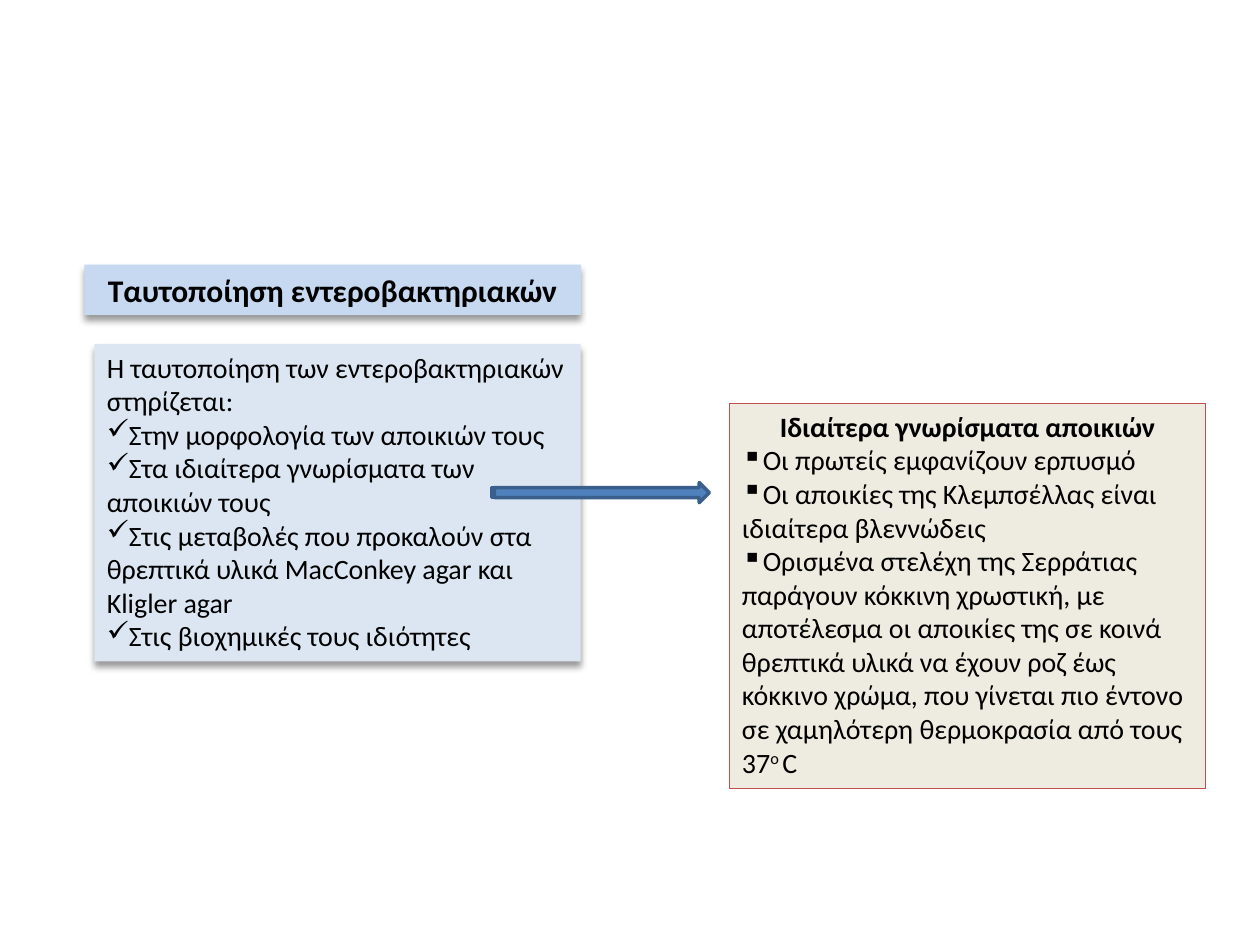
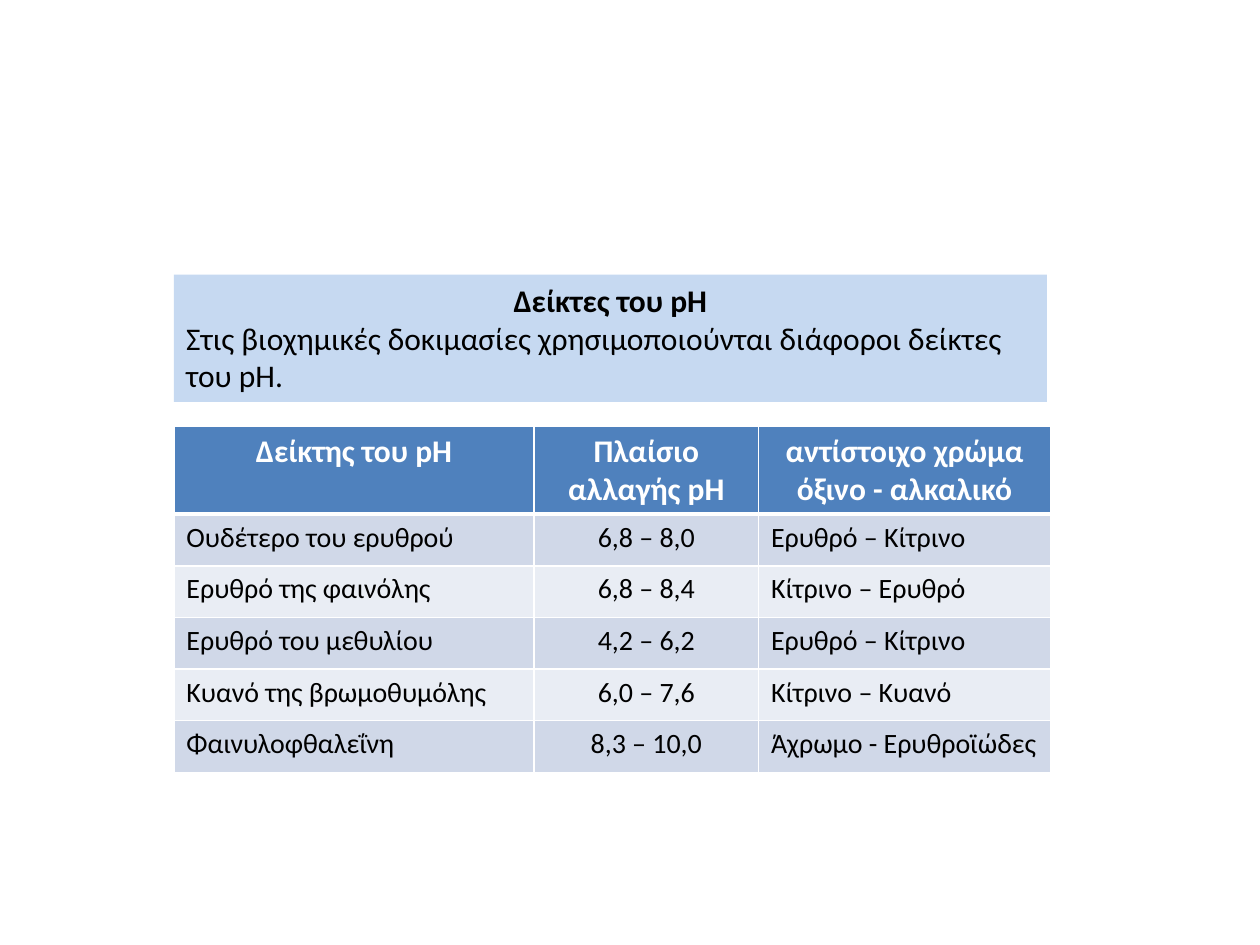
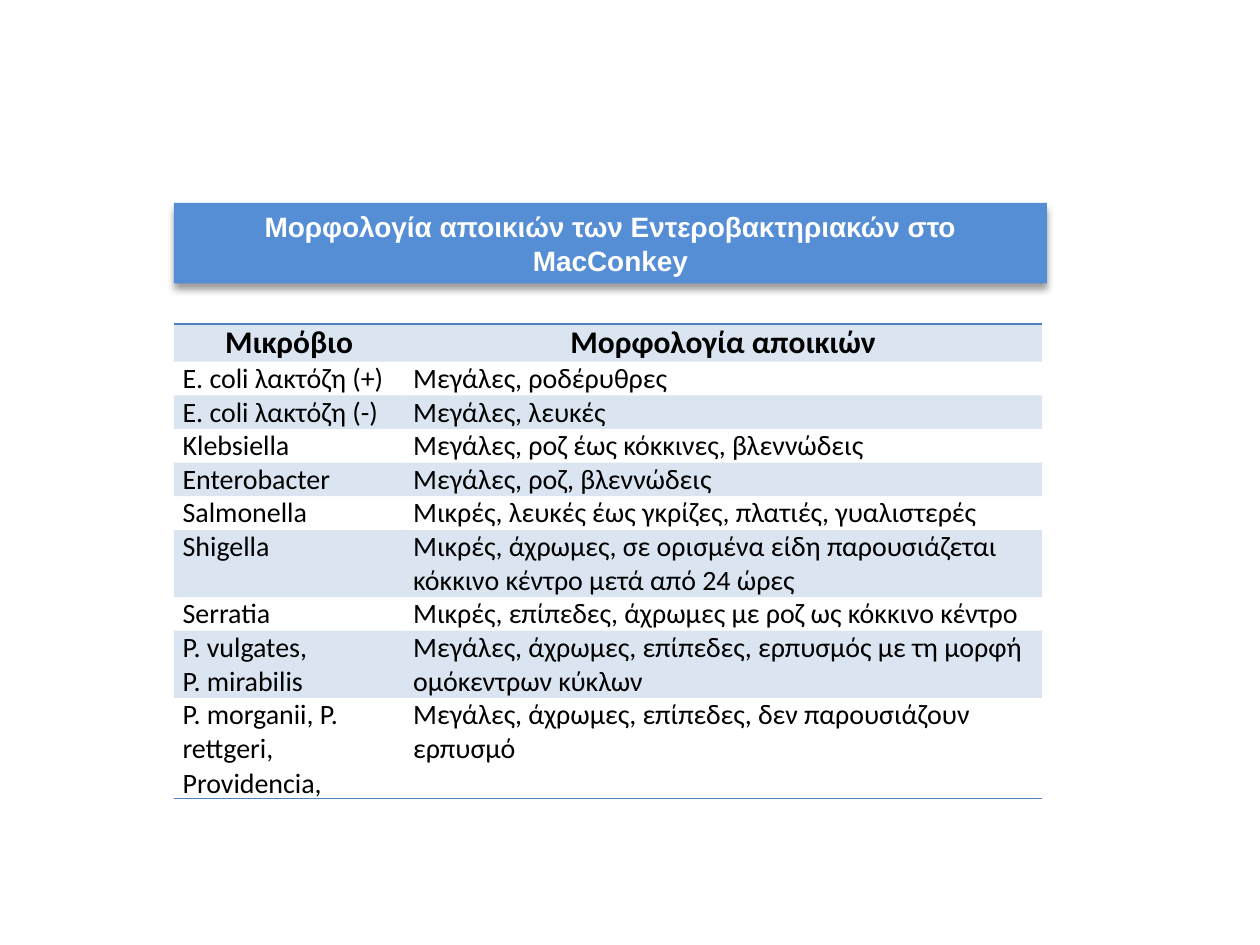
from lxml import etree
from pptx import Presentation
from pptx.dml.color import RGBColor
from pptx.enum.shapes import MSO_SHAPE
from pptx.enum.text import MSO_ANCHOR, MSO_AUTO_SIZE, PP_ALIGN
from pptx.oxml.ns import qn
from pptx.util import Inches, Pt

LEFT, CENTER = PP_ALIGN.LEFT, PP_ALIGN.CENTER
TOP, MIDDLE = MSO_ANCHOR.TOP, MSO_ANCHOR.MIDDLE
FIT_SHAPE = MSO_AUTO_SIZE.SHAPE_TO_FIT_TEXT
RECTANGLE, STRIPED_ARROW = MSO_SHAPE.RECTANGLE, MSO_SHAPE.STRIPED_RIGHT_ARROW

BLACK, WHITE = "000000", "FFFFFF"
BLUE, DARK_BLUE, TITLE_BLUE = "4F81BD", "3A5F8C", "558ED5"
SKY, PALE_BLUE, CREAM, RED = "C6D9F1", "DCE6F2", "EEECE1", "C0504D"
BAND_FILLS = ("D0D8E8", "E9EDF4")
BODY_FONT, TITLE_FONT = "Calibri", "Arial"
HEADING_SIZE, BODY_SIZE = 18, 16
MARGIN = 1.38

# Slide 1 content
IDENTIFICATION_TITLE = "Ταυτοποίηση εντεροβακτηριακών"
IDENTIFICATION_INTRO = "Η ταυτοποίηση των εντεροβακτηριακών στηρίζεται:"
IDENTIFICATION_CRITERIA = [
    "Στην μορφολογία των αποικιών τους",
    "Στα ιδιαίτερα γνωρίσματα των αποικιών τους",
    "Στις μεταβολές που προκαλούν στα θρεπτικά υλικά MacConkey agar και Kligler agar",
    "Στις βιοχημικές τους ιδιότητες",
]
COLONY_TITLE = "Ιδιαίτερα γνωρίσματα αποικιών"
COLONY_TRAITS = [
    "Οι πρωτείς εμφανίζουν ερπυσμό",
    "Οι αποικίες της Κλεμπσέλλας είναι ιδιαίτερα βλεννώδεις",
    "Ορισμένα στελέχη της Σερράτιας παράγουν κόκκινη χρωστική, με αποτέλεσμα "
    "οι αποικίες της σε κοινά θρεπτικά υλικά να έχουν ροζ έως κόκκινο χρώμα, "
    "που γίνεται πιο έντονο σε χαμηλότερη θερμοκρασία από τους 37^ο ^C",
]

# Slide 2 content
INDICATOR_TITLE = "Δείκτες του pH"
INDICATOR_INTRO = "Στις βιοχημικές δοκιμασίες χρησιμοποιούνται διάφοροι δείκτες του pH."
INDICATOR_ROWS = [
    ("Δείκτης του pH", "Πλαίσιο αλλαγής pH", "αντίστοιχο χρώμα όξινο - αλκαλικό"),
    ("Ουδέτερο του ερυθρού", "6,8 – 8,0", "Ερυθρό – Κίτρινο"),
    ("Ερυθρό της φαινόλης", "6,8 – 8,4", "Κίτρινο – Ερυθρό"),
    ("Ερυθρό του μεθυλίου", "4,2 – 6,2", "Ερυθρό – Κίτρινο"),
    ("Κυανό της βρωμοθυμόλης", "6,0 – 7,6", "Κίτρινο – Κυανό"),
    ("Φαινυλοφθαλεΐνη", "8,3 – 10,0", "Άχρωμο - Ερυθροϊώδες"),
]

# Slide 3 content: microbe, morphology, number of text lines
MORPHOLOGY_TITLE = "Μορφολογία αποικιών των Εντεροβακτηριακών στο MacConkey"
MORPHOLOGY_ROWS = [
    ("Μικρόβιο", "Μορφολογία αποικιών", 1),
    ("E. coli λακτόζη (+)", "Μεγάλες, ροδέρυθρες", 1),
    ("E. coli λακτόζη (-)", "Μεγάλες, λευκές", 1),
    ("Klebsiella", "Μεγάλες, ροζ έως κόκκινες, βλεννώδεις", 1),
    ("Enterobacter", "Μεγάλες, ροζ, βλεννώδεις", 1),
    ("Salmonella", "Μικρές, λευκές έως γκρίζες, πλατιές, γυαλιστερές", 1),
    ("Shigella", "Μικρές, άχρωμες, σε ορισμένα είδη παρουσιάζεται "
                 "κόκκινο κέντρο μετά από 24 ώρες", 2),
    ("Serratia", "Μικρές, επίπεδες, άχρωμες με ροζ ως κόκκινο κέντρο", 1),
    ("P. vulgates,\nP. mirabilis", "Μεγάλες, άχρωμες, επίπεδες, ερπυσμός με τη "
                                   "μορφή ομόκεντρων κύκλων", 2),
    ("P. morganii, P. rettgeri, Providencia,",
     "Μεγάλες, άχρωμες, επίπεδες, δεν παρουσιάζουν ερπυσμό", 3),
]


def rgb(color):
    return RGBColor.from_string(color)


def add_child(parent, tag, **attributes):
    return etree.SubElement(parent, qn(tag), attributes)


def set_fill(fill, color, alpha=None):
    fill.solid()
    fill.fore_color.rgb = rgb(color)
    return fill


def heading(text, size=HEADING_SIZE, color=BLACK, font=BODY_FONT):
    return dict(text=text, size=size, color=color, font=font, bold=True, align=CENTER)


def body(text, size=BODY_SIZE, align=LEFT, bullet=None):
    return dict(text=text, size=size, align=align, bullet=bullet)


def write(frame, paragraphs):
    """Fill a text frame; text between ^ marks is superscript."""
    for index, item in enumerate(paragraphs):
        para = frame.add_paragraph() if index else frame.paragraphs[0]
        para.alignment = item["align"]
        if item.get("bullet"):
            properties = para._p.get_or_add_pPr()
            properties.set("marL", "0")
            properties.set("indent", "0")
            add_child(properties, "a:buChar", char=item["bullet"])
        for part, text in enumerate(item["text"].split("^")):
            span = para.add_run()
            span.text = text
            span.font.name = item.get("font", BODY_FONT)
            span.font.size = Pt(item["size"])
            span.font.bold = item.get("bold", False)
            span.font.color.rgb = rgb(item.get("color", BLACK))
            if part % 2:
                span.font._element.set("baseline", "30000")


def add_shadow(shape):
    effects = shape._element.spPr.find(qn("a:effectLst"))
    shadow = add_child(effects, "a:outerShdw", blurRad=str(Pt(4)), dist=str(Pt(3)),
                       dir="5400000", rotWithShape="0")
    color = add_child(shadow, "a:srgbClr", val=BLACK)
    add_child(color, "a:alpha", val="40000")


def add_box(page, place, fill, paragraphs=(), line=None, line_width=0.75,
            shadow=False, anchor=TOP, kind=RECTANGLE):
    box = page.shapes.add_shape(kind, *map(Inches, place))
    box.shadow.inherit = False
    set_fill(box.fill, fill)
    if line:
        box.line.color.rgb = rgb(line)
        box.line.width = Pt(line_width)
    else:
        box.line.fill.background()
    if shadow:
        add_shadow(box)
    if paragraphs:
        frame = box.text_frame
        frame.word_wrap = True
        frame.auto_size = FIT_SHAPE
        frame.vertical_anchor = anchor
        write(frame, paragraphs)


def set_borders(cell, **sides):
    """Draw the given sides as (colour, points); the others stay invisible."""
    properties = cell._tc.get_or_add_tcPr()
    for side in "LRTB":
        color, width = sides.get(side, (None, 0))
        line = add_child(properties, f"a:ln{side}", w=str(Pt(width)))
        if color:
            add_child(add_child(line, "a:solidFill"), "a:srgbClr", val=color)
        else:
            add_child(line, "a:noFill")


def add_grid(page, left, top, widths, heights):
    frame = page.shapes.add_table(len(heights), len(widths), Inches(left), Inches(top),
                                  Inches(sum(widths)), Inches(sum(heights)))
    table = frame.table
    table.first_row = table.horz_banding = False
    for column, width in zip(table.columns, widths):
        column.width = Inches(width)
    for row, height in zip(table.rows, heights):
        row.height = Inches(height)
    return table


def build_identification(page):
    add_box(page, (0.67, 2.1, 3.94, 0.4), SKY, [heading(IDENTIFICATION_TITLE)], shadow=True)
    criteria = [body(text, bullet="✓") for text in IDENTIFICATION_CRITERIA]
    add_box(page, (0.75, 2.73, 3.86, 2.52), PALE_BLUE,
            [body(IDENTIFICATION_INTRO)] + criteria, shadow=True)
    traits = [body(text, bullet="▪") for text in COLONY_TRAITS]
    add_box(page, (5.79, 3.2, 3.78, 3.06), CREAM,
            [heading(COLONY_TITLE, BODY_SIZE)] + traits, line=RED)
    add_box(page, (3.9, 3.83, 1.73, 0.16), BLUE, line=DARK_BLUE, line_width=2,
            kind=STRIPED_ARROW)


def build_indicators(page):
    add_box(page, (MARGIN, 2.18, 6.93, 1.01), SKY,
            [heading(INDICATOR_TITLE), body(INDICATOR_INTRO, HEADING_SIZE)])
    heights = [0.69] + [0.41] * (len(INDICATOR_ROWS) - 1)
    table = add_grid(page, MARGIN, 3.38, (2.86, 1.78, 2.32), heights)
    thin, thick = (WHITE, 1), (WHITE, 3)
    for r, row in enumerate(INDICATOR_ROWS):
        for c, text in enumerate(row):
            cell = table.cell(r, c)
            set_borders(cell, L=thin, R=thin, T=thick if r == 1 else thin,
                        B=thick if r == 0 else thin)
            set_fill(cell.fill, BAND_FILLS[(r - 1) % 2] if r else BLUE)
            align = CENTER if c == 1 else LEFT
            write(cell.text_frame,
                  [body(text, align=align) if r else heading(text, color=WHITE)])


def build_morphology(page):
    add_box(page, (MARGIN, 1.61, 6.93, 0.64), TITLE_BLUE,
            [heading(MORPHOLOGY_TITLE, BODY_SIZE, WHITE, TITLE_FONT)],
            shadow=True, anchor=MIDDLE)
    heights = [0.3] + [0.26 * lines for _, _, lines in MORPHOLOGY_ROWS[1:]]
    table = add_grid(page, MARGIN, 2.57, (1.83, 5.06), heights)
    last = len(MORPHOLOGY_ROWS) - 1
    edges = {0: {"T": (BLUE, 1)}, last: {"B": (BLUE, 1)}}
    for r, (microbe, morphology, _) in enumerate(MORPHOLOGY_ROWS):
        for c, text in enumerate((microbe, morphology)):
            cell = table.cell(r, c)
            cell.margin_left = cell.margin_right = Inches(0.07)
            cell.margin_top = cell.margin_bottom = 0
            set_borders(cell, **edges.get(r, {}))
            if r % 2:
                cell.fill.background()
            else:
                set_fill(cell.fill, BLUE)
                color = cell._tc.tcPr.find(qn("a:solidFill"))[0]
                add_child(color, "a:alpha", val="20000")
            style = body if r else heading
            write(cell.text_frame, [style(part) for part in text.split("\n")])


def main():
    deck = Presentation()
    deck.slide_width, deck.slide_height = Inches(10), Inches(7.5)
    for build in (build_identification, build_indicators, build_morphology):
        build(deck.slides.add_slide(deck.slide_layouts[6]))
    deck.save("out.pptx")


if __name__ == "__main__":
    main()
